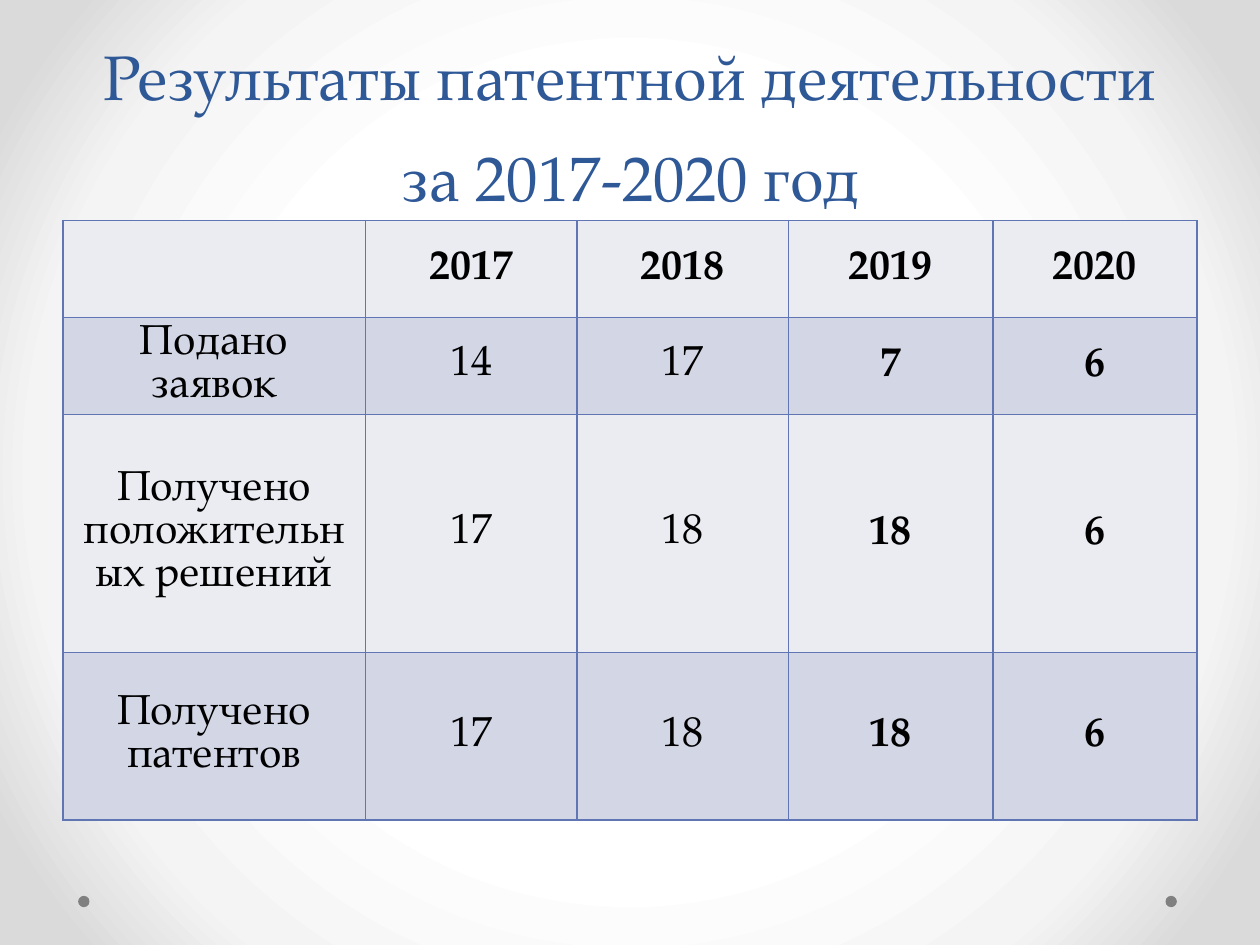
from lxml import etree
from pptx import Presentation
from pptx import util as u
from pptx.dml import color
from pptx.enum import shapes, text
from pptx.oxml import ns

FONT = "TeX Gyre Pagella"
LINE = "6076B4"
BANDS = ("EAECF2", "D2D6E5")
COLUMN_WIDTHS = (2.4, 1.68, 1.68, 1.62, 1.62)
ROW_HEIGHTS = (0.77, 0.77, 1.89, 1.33)
RESULTS = (
    ("", "2017", "2018", "2019", "2020"),
    ("Подано заявок", "14", "17", "7", "6"),
    ("Получено положительных решений", "17", "18", "18", "6"),
    ("Получено патентов", "17", "18", "18", "6"),
)


def rgb(value):
    return color.RGBColor.from_string(value)


def add_node(parent, tag, **attributes):
    return etree.SubElement(parent, ns.qn(tag), attributes)


def write(frame, content, size=24, ink="000000", bold=False, spacing=24.5):
    para = frame.paragraphs[0]
    para.alignment = text.PP_ALIGN.CENTER
    para.line_spacing = u.Pt(spacing)
    span = para.add_run()
    span.text = content
    span.font.name = FONT
    span.font.size = u.Pt(size)
    span.font.bold = bold
    span.font.color.rgb = rgb(ink)


def paint_background(page):
    page.background.fill.gradient()
    gradient = next(page.background._cSld.iter(ns.qn("a:gradFill")))
    for child in list(gradient):
        gradient.remove(child)
    stops = add_node(gradient, "a:gsLst")
    for position, shade in ((50, "FFFFFF"), (76, "F4F4F4"), (92, "DADADA")):
        stop = add_node(stops, "a:gs", pos=str(position * 1000))
        add_node(stop, "a:srgbClr", val=shade)
    route = add_node(gradient, "a:path", path="circle")
    add_node(route, "a:fillToRect", l="50000", t="50000", r="50000", b="50000")


def add_dots(page, left, top, width, size):
    for x in (left, left + width - size):
        dot = page.shapes.add_shape(
            shapes.MSO_SHAPE.OVAL, u.Inches(x), u.Inches(top), u.Inches(size), u.Inches(size))
        dot.shadow.inherit = False
        dot.fill.solid()
        dot.fill.fore_color.rgb = rgb("808080")
        dot.line.fill.background()


def place_title(page, left, top, width, height):
    title = page.shapes.title
    title.left, title.top = u.Inches(left), u.Inches(top)
    title.width, title.height = u.Inches(width), u.Inches(height)
    frame = title.text_frame
    frame.word_wrap = True
    frame.auto_size = text.MSO_AUTO_SIZE.NONE
    frame.vertical_anchor = text.MSO_ANCHOR.BOTTOM
    write(frame, "Результаты патентной деятельности за 2017-2020 год",
          size=36, ink="2F5897", spacing=58)


def add_borders(cell):
    properties = cell._tc.get_or_add_tcPr()
    for index, side in enumerate(("a:lnL", "a:lnR", "a:lnT", "a:lnB")):
        border = etree.Element(ns.qn(side), w=str(u.Pt(1)))
        add_node(add_node(border, "a:solidFill"), "a:srgbClr", val=LINE)
        properties.insert(index, border)


def add_results(page, left, top, width, height):
    table = page.shapes.add_table(
        len(RESULTS), len(COLUMN_WIDTHS), u.Inches(left), u.Inches(top),
        u.Inches(width), u.Inches(height)).table
    for column, size in zip(table.columns, COLUMN_WIDTHS):
        column.width = u.Inches(size)
    for row, size in zip(table.rows, ROW_HEIGHTS):
        row.height = u.Inches(size)
    for r, values in enumerate(RESULTS):
        for c, value in enumerate(values):
            cell = table.cell(r, c)
            cell.vertical_anchor = text.MSO_ANCHOR.MIDDLE
            cell.margin_top = cell.margin_bottom = u.Inches(0.04)
            cell.fill.solid()
            cell.fill.fore_color.rgb = rgb(BANDS[r % 2])
            add_borders(cell)
            if value:
                write(cell.text_frame, value, bold=r == 0 or c > 2)


def main():
    deck = Presentation()
    deck.slide_width, deck.slide_height = u.Inches(10), u.Inches(7.5)
    page = deck.slides.add_slide(deck.slide_layouts[5])
    paint_background(page)
    add_dots(page, 0.62, 7.11, 8.72, 0.09)
    place_title(page, 0.5, 0, 9, 1.75)
    add_results(page, 0.5, 1.75, sum(COLUMN_WIDTHS), sum(ROW_HEIGHTS))
    deck.save("out.pptx")


if __name__ == "__main__":
    main()
